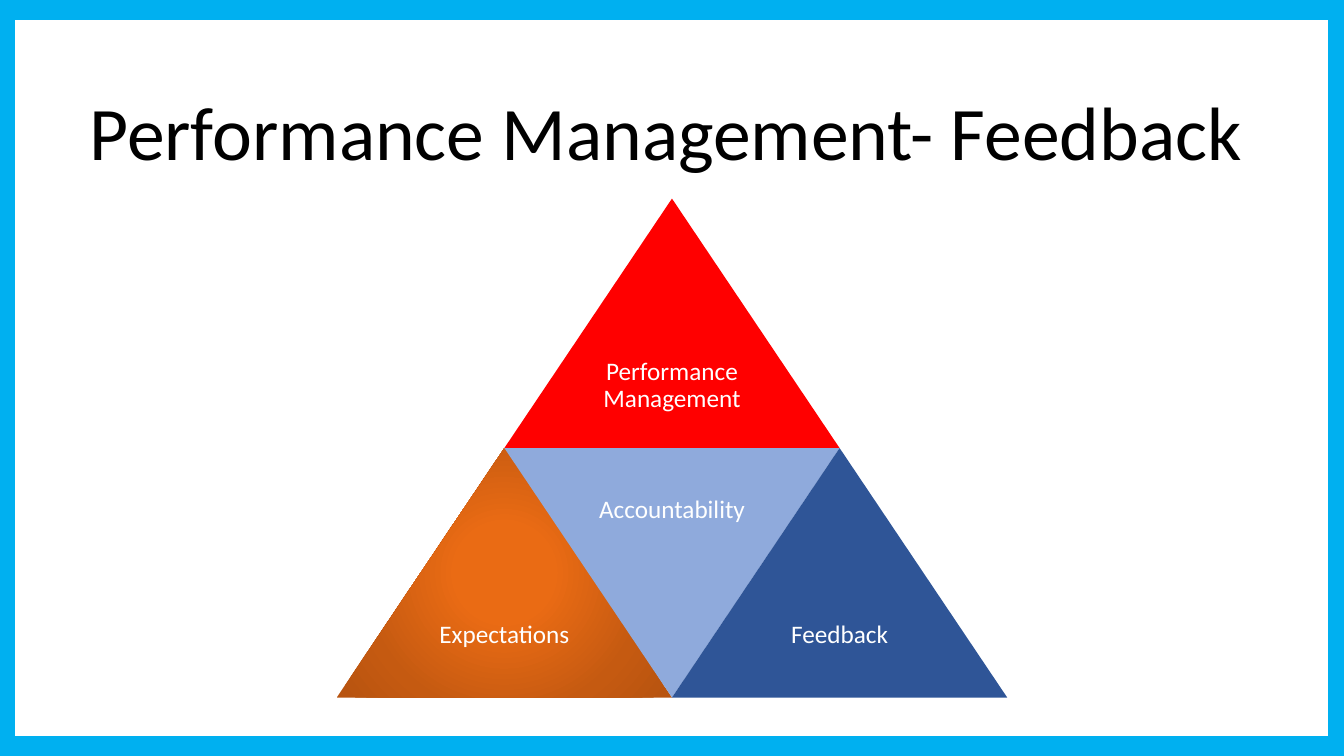
from pptx import Presentation, util as u
from pptx.dml.color import RGBColor
from pptx.enum import shapes, text
from pptx.oxml import parse_xml
from pptx.oxml.ns import nsdecls, qn

BLACK = RGBColor(0x00, 0x00, 0x00)
WHITE = RGBColor(0xFF, 0xFF, 0xFF)
RED = RGBColor(0xFF, 0x00, 0x00)
RUST = RGBColor(0xC5, 0x5A, 0x11)
PALE = RGBColor(0x8F, 0xAA, 0xDC)
NAVY = RGBColor(0x2F, 0x55, 0x97)
SKY = RGBColor(0x00, 0xB0, 0xF0)
GLOW = [(0, "EA6B14"), (23, "EA6B14"), (69, "C55A11"), (97, "B85410")]

deck = Presentation()
deck.slide_width, deck.slide_height = u.Inches(13.33), u.Inches(7.5)
slide = deck.slides.add_slide(deck.slide_layouts[6])


def write(words, box, size=18, color=WHITE, align=text.PP_ALIGN.CENTER,
          anchor=text.MSO_ANCHOR.MIDDLE, inset=0.07):
    frame = slide.shapes.add_textbox(*map(u.Inches, box)).text_frame
    frame.word_wrap = True
    frame.vertical_anchor = anchor
    frame.margin_left = frame.margin_right = u.Inches(inset)
    frame.margin_top = frame.margin_bottom = u.Inches(min(inset, 0.07))
    para = frame.paragraphs[0]
    para.alignment = align
    para.line_spacing = 0.9
    run = para.add_run()
    run.text = words
    run.font.size = u.Pt(size)
    run.font.name = "Calibri"
    run.font.color.rgb = color


def draw(kind, box, color):
    shape = slide.shapes.add_shape(kind, *map(u.Inches, box))
    shape.shadow.inherit = False
    shape.fill.solid()
    shape.fill.fore_color.rgb = color
    shape.line.fill.background()
    return shape


write("Performance Management- Feedback", (0.79, 0.58, 11.76, 1.24), size=54,
      color=BLACK, align=text.PP_ALIGN.LEFT, anchor=text.MSO_ANCHOR.BOTTOM, inset=0.1)

left, top, wide, high = 3.34, 1.97, 3.325, 2.475
parts = [
    ("Performance Management", 0.5, 0, RED, False),
    ("Expectations", 0, 1, RUST, False),
    ("Accountability", 0.5, 1, PALE, True),
    ("Feedback", 1, 1, NAVY, False),
]
for words, col, row, color, flip in parts:
    x, y = left + col * wide, top + row * high
    tri = draw(shapes.MSO_SHAPE.ISOSCELES_TRIANGLE, (x, y, wide, high), color)
    tri.rotation = 180 if flip else 0
    if color == RUST:
        stops = "".join(f'<a:gs pos="{at * 1000}"><a:srgbClr val="{tone}"/></a:gs>'
                        for at, tone in GLOW)
        prop = tri.fill._xPr
        prop.replace(prop.find(qn("a:solidFill")), parse_xml(
            f'<a:gradFill {nsdecls("a")} rotWithShape="1"><a:gsLst>{stops}</a:gsLst>'
            '<a:path path="circle"><a:fillToRect l="50000" t="50000" r="50000" b="50000"/>'
            '</a:path></a:gradFill>'))
    write(words, (x + wide / 4, y if flip else y + high / 2, wide / 2, high / 2))

full, tall, side, edge = 13.32, 7.5, 0.14, 0.19
bars = [
    (0, 0, full, edge),
    (0, 0, side, tall),
    (full - side, 0, side, tall),
    (side / 2, tall - edge, full - side / 2, edge),
]
for box in bars:
    bar = draw(shapes.MSO_SHAPE.RECTANGLE, box, SKY)
    bar.line.color.rgb = SKY
    bar.line.width = u.Pt(1)

deck.save("out.pptx")
